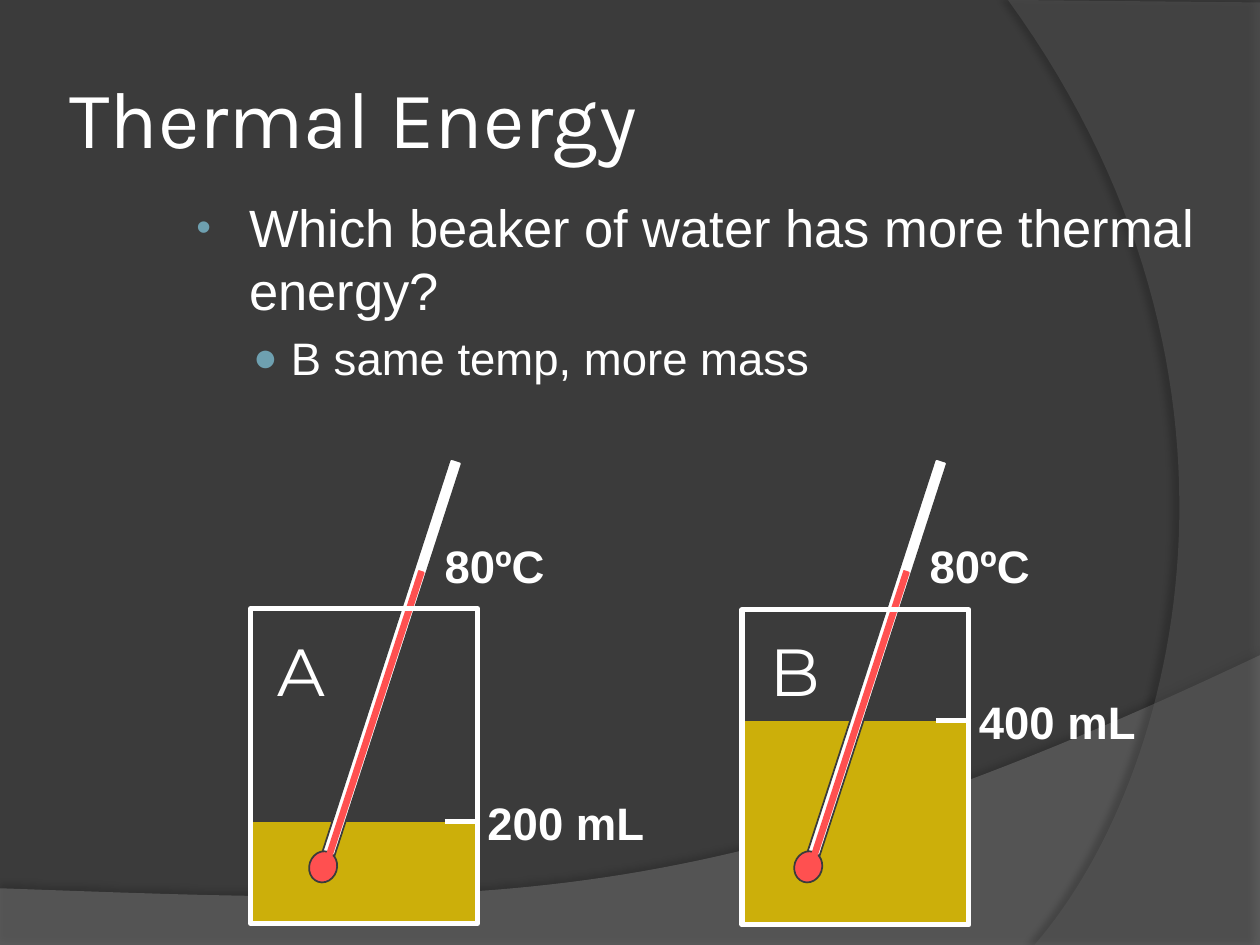
from dataclasses import dataclass
from lxml import etree
from pptx import Presentation
from pptx.dml.color import RGBColor
from pptx.enum.shapes import MSO_CONNECTOR, MSO_SHAPE
from pptx.enum.text import MSO_ANCHOR
from pptx.oxml import parse_xml
from pptx.oxml.ns import nsdecls, qn
from pptx.util import Inches, Pt


@dataclass(frozen=True)
class Theme:
    background: str = "3B3B3B"
    white: str = "FFFFFF"
    water: str = "CCAF0A"
    red: str = "FF5050"
    bullet: str = "6EA0B0"
    swoosh: str = "7F7F7F"
    arc: str = "5E5E5E"
    title: int = 46
    letter: int = 38
    question: int = 30
    label: int = 26


theme = Theme()


def paint(shape, fill=None, line=None, width=1):
    shape.shadow.inherit = False
    for target, color in ((shape.fill, fill), (shape.line.fill, line)):
        if color:
            target.solid()
            target.fore_color.rgb = RGBColor.from_string(color)
        else:
            target.background()
    if line:
        shape.line.width = Pt(width)


def write(shapes, box, text, size, font="Arial", bold=False, wrap=False):
    tb = shapes.add_textbox(*map(Inches, box))
    tf = tb.text_frame
    tf.word_wrap = wrap
    for i, (line, points) in enumerate(zip(text.split("\n"), size)):
        p = tf.paragraphs[0] if i == 0 else tf.add_paragraph()
        r = p.add_run()
        r.text = line
        style = {"name": font, "size": Pt(points), "bold": bold}
        for key, value in style.items():
            setattr(r.font, key, value)
        r.font.color.rgb = RGBColor.from_string(theme.white)
    return tf


prs = Presentation()
prs.slide_width, prs.slide_height = Inches(10), Inches(7.5)
s = prs.slides.add_slide(prs.slide_layouts[6])
s.background.fill.solid()
s.background.fill.fore_color.rgb = RGBColor.from_string(theme.background)

swoosh_curve = ((10, 5.2), (5.59, 7.29), (3.91, 7.19), (0, 7.05))
arc_curve = ((8.21, 7.5), (9.35, 6.19), (10.18, 3), (8, 0))
backdrops = (
    (swoosh_curve, [(0, 7.51), (10, 7.51)], theme.swoosh, 45, 35, 3.5, 270),
    (arc_curve, [(10, 0.02), (10, 7.5)], theme.arc, 40, 45, 4, 180),
)
for curve, corners, color, alpha, shade, distance, angle in backdrops:
    points = []
    for step in range(61):
        t = step / 60
        weights = ((1 - t) ** 3, 3 * t * (1 - t) ** 2, 3 * t * t * (1 - t), t ** 3)
        points.append([Inches(sum(w * c[axis] for w, c in zip(weights, curve)))
                       for axis in (0, 1)])
    points += [[Inches(v) for v in corner] for corner in corners]
    builder = s.shapes.build_freeform(*points[0])
    builder.add_line_segments(points[1:], close=True)
    sp = builder.convert_to_shape()
    paint(sp, color)
    solid = sp.fill._xPr.find(qn("a:solidFill"))
    etree.SubElement(solid[0], qn("a:alpha"), val=str(alpha * 1000))
    effects = sp._element.spPr.find(qn("a:effectLst"))
    effects.append(parse_xml(
        f'<a:outerShdw {nsdecls("a")} blurRad="{Pt(4)}" dist="{Pt(distance)}" '
        f'dir="{angle * 60000}" rotWithShape="0"><a:srgbClr val="000000">'
        f'<a:alpha val="{shade * 1000}"/></a:srgbClr></a:outerShdw>'))

tf = write(s.shapes, (0.5, 0.3, 8.17, 1.25), "Thermal Energy", [theme.title],
           "Karla", wrap=True)
tf.vertical_anchor = MSO_ANCHOR.MIDDLE
for side in ("left", "right", "top", "bottom"):
    setattr(tf, f"margin_{side}", Inches(0.05))

tf = write(s.shapes, (1.42, 1.5, 8.34, 2.16),
           "Which beaker of water has more thermal energy?\nB same temp, more mass",
           [theme.question, theme.label], wrap=True)
bullets = ((0, 0.46, -0.42, "•", 80, 6), (1, 0.79, -0.3, "●", 90, 5.2))
for p, (level, margin, indent, mark, size, before) in zip(tf.paragraphs, bullets):
    p.level = level
    p.space_before = Pt(before)
    pPr = p._p.get_or_add_pPr()
    pPr.set("marL", str(Inches(margin)))
    pPr.set("indent", str(Inches(indent)))
    color = etree.SubElement(pPr, qn("a:buClr"))
    etree.SubElement(color, qn("a:srgbClr"), val=theme.bullet)
    etree.SubElement(pPr, qn("a:buSzPct"), val=str(size * 1000))
    etree.SubElement(pPr, qn("a:buFont"), typeface="Arial")
    etree.SubElement(pPr, qn("a:buChar"), char=mark)

beakers = (
    ("A", "200 mL", 1.99, 4.83, 6.53, 1.37, 2.1),
    ("B", "400 mL", 5.89, 4.84, 5.73, 5.22, 6.01),
)
for letter, volume, left, top, level, stem, letter_left in beakers:
    shapes = s.shapes.add_group_shape().shapes
    water = shapes.add_shape(MSO_SHAPE.RECTANGLE, Inches(left), Inches(level),
                             Inches(1.8), Inches(top + 2.5 - level))
    paint(water, theme.water, theme.water)

    tick = shapes.add_connector(MSO_CONNECTOR.STRAIGHT, Inches(left + 1.54),
                                Inches(level - 0.01), Inches(left + 1.8),
                                Inches(level - 0.01))
    tick.line.color.rgb = RGBColor.from_string(theme.white)
    tick.line.width = Pt(3)
    etree.SubElement(tick._element.spPr, qn("a:effectLst"))

    thermometer = (
        (MSO_SHAPE.ROUNDED_RECTANGLE, 0, 5.24, 3.44, 0.1, theme.white, theme.background),
        (MSO_SHAPE.OVAL, 1.07, 6.77, 0.25, 0.22, theme.red, theme.background),
        (MSO_SHAPE.RECTANGLE, 0.43, 5.64, 2.36, 0.04, theme.red, theme.red),
    )
    for kind, dx, y, width, height, fill, line in thermometer:
        part = shapes.add_shape(kind, Inches(stem + dx), Inches(y),
                                Inches(width), Inches(height))
        part.rotation = 288
        paint(part, fill, line)

    glass = shapes.add_shape(MSO_SHAPE.RECTANGLE, Inches(left), Inches(top),
                             Inches(1.8), Inches(2.5))
    paint(glass, None, theme.white, 3)

    write(shapes, (left + 1.78, level - 0.27, 1.45, 0.53), volume,
          [theme.label], bold=True)
    write(shapes, (stem + 2.06, 4.22, 1, 0.53), "80ºC", [theme.label], bold=True)
    write(shapes, (letter_left, 4.95, 0.61, 0.73), letter, [theme.letter], "Montserrat")

prs.save("out.pptx")
